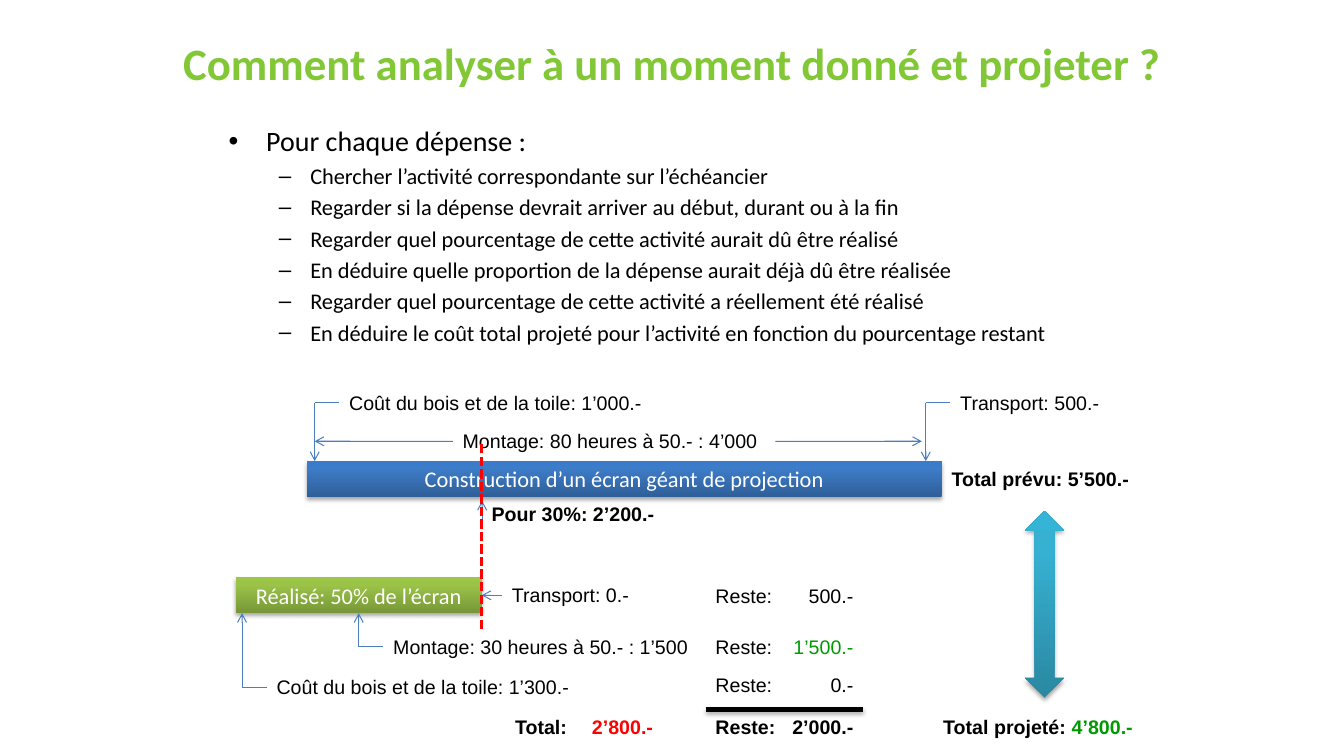
from copy import deepcopy

from lxml import etree
from pptx import Presentation
from pptx import util as u
from pptx.dml.color import RGBColor
from pptx.enum import dml, shapes, text
from pptx.oxml.ns import qn

# Colours; gradients run from bottom to top
BLUE, BLACK, WHITE = "4B7EBC", "000000", "FFFFFF"
GREEN, RED, LIME = "009900", "FF0000", "82C836"
GREEN_BAR = ("779737", "9BC348", "9DC746")
BLUE_BAR = ("2F5F99", "3D7CC7", "3A7CCB")
TEAL_ARROW = ("2A88A2", "37B1D2", "34B4D6")
STOPS = (0, 0.8, 1)

# Shared lengths in centimetres
LABEL_H = 0.86
REACH = 0.62
AMOUNT_W, AMOUNT_TAB = 4.17, 3.48

# Connection sites of a rectangle
LEFT, BOTTOM, RIGHT = 1, 2, 3

# Bullet formats by level: margin, hanging indent, mark, text size, space before
LEVELS = [(0.95, 0.95, "•", 20, 0), (2.06, 0.79, "–", 16, 3.2)]
METHOD = [
    (0, "Pour chaque dépense :"),
    (1, "Chercher l’activité correspondante sur l’échéancier"),
    (1, "Regarder si la dépense devrait arriver au début, durant ou à la fin"),
    (1, "Regarder quel pourcentage de cette activité aurait dû être réalisé"),
    (1, "En déduire quelle proportion de la dépense aurait déjà dû être réalisée"),
    (1, "Regarder quel pourcentage de cette activité a réellement été réalisé"),
    (1, "En déduire le coût total projeté pour l’activité en fonction du pourcentage restant"),
]


def rgb(value):
    return RGBColor.from_string(value)


def cm(*values):
    return [u.Cm(v) for v in values]


def set_all(target, **values):
    for key, value in values.items():
        setattr(target, key, value)


def sub(parent, tag, **attrs):
    return etree.SubElement(parent, qn(tag), attrs)


def add_run(p, content, color, size, name, bold=False):
    r = p.add_run()
    r.text = content
    set_all(r.font, size=u.Pt(size), name=name, bold=bold)
    r.font.color.rgb = rgb(color)


def drop_shadow(effects):
    shadow = sub(effects, "a:outerShdw", blurRad="39370", dist="22860",
                 dir="5400000", rotWithShape="0")
    sub(sub(shadow, "a:srgbClr", val=BLACK), "a:alpha", val="35000")


def add_label(s, x, mid, w, *runs, bold=False, tab=None):
    """One line of (text, colour) runs centred on height mid."""
    sp = s.shapes.add_textbox(*cm(x, mid - LABEL_H / 2, w, LABEL_H))
    sp.text_frame.word_wrap = tab is not None
    p = sp.text_frame.paragraphs[0]
    if tab:
        tabs = sub(p._p.get_or_add_pPr(), "a:tabLst")
        sub(tabs, "a:tab", pos=str(u.Cm(tab)), algn="r")
    for content, color in runs:
        add_run(p, content, color, 14, "Arial", bold)
    return sp


def add_line(s, x1, y1, x2, y2, color=BLUE, width=0.75, arrow=False,
             dash=None, shadow=False, begin=None, end=None):
    """Straight line; begin and end are (shape, site) joints."""
    c = s.shapes.add_connector(shapes.MSO_CONNECTOR.STRAIGHT, *cm(x1, y1, x2, y2))
    if begin:
        c.begin_connect(*begin)
    if end:
        c.end_connect(*end)
    c.line.color.rgb = rgb(color)
    set_all(c.line, width=u.Pt(width), dash_style=dash)
    if arrow:
        sub(c.line._get_or_add_ln(), "a:tailEnd", type="arrow")
    effects = sub(c._element.spPr, "a:effectLst")
    if shadow:
        drop_shadow(effects)


def add_elbow(s, x, mid, bar_y, w, content, end=None):
    """Label, short line and arrow that lead to the edge of a bar."""
    label = add_label(s, x + REACH, mid, w, (content, BLACK))
    add_line(s, x, mid, x + REACH, mid, end=(label, LEFT))
    add_line(s, x, mid, x, bar_y, arrow=True, end=end)


def add_gradient_shape(s, kind, box, colors):
    sp = s.shapes.add_shape(kind, *cm(*box))
    sp.fill.gradient()
    sp.fill.gradient_angle = 90
    stop_list = sp._element.spPr.find(".//" + qn("a:gsLst"))
    stop_list.append(deepcopy(stop_list[-1]))
    for stop, position, color in zip(sp.fill.gradient_stops, STOPS, colors):
        stop.position = position
        stop.color.rgb = rgb(color)
    sp.line.fill.background()
    sp.shadow.inherit = False
    drop_shadow(sp._element.spPr.find(qn("a:effectLst")))
    return sp


def add_bar(s, box, colors, content):
    sp = add_gradient_shape(s, shapes.MSO_SHAPE.RECTANGLE, box, colors)
    sp.text_frame.vertical_anchor = text.MSO_ANCHOR.MIDDLE
    p = sp.text_frame.paragraphs[0]
    p.alignment = text.PP_ALIGN.CENTER
    add_run(p, content, WHITE, 16, "Calibri")
    return sp


def draw_title(s, box):
    sp = s.shapes.title
    left, top, width, height = cm(*box)
    set_all(sp, left=left, top=top, width=width, height=height)
    set_all(sp.text_frame, auto_size=text.MSO_AUTO_SIZE.NONE,
            vertical_anchor=text.MSO_ANCHOR.MIDDLE)
    p = sp.text_frame.paragraphs[0]
    p.alignment = text.PP_ALIGN.CENTER
    add_run(p, "Comment analyser à un moment donné et projeter ?", LIME, 32, "Calibri", True)


def draw_method(s, box):
    tf = s.shapes.add_textbox(*cm(*box)).text_frame
    tf.word_wrap = True
    for i, (level, content) in enumerate(METHOD):
        p = tf.add_paragraph() if i else tf.paragraphs[0]
        margin, hang, mark, size, before = LEVELS[level]
        pPr = p._p.get_or_add_pPr()
        pPr.set("marL", str(u.Cm(margin)))
        pPr.set("indent", str(-u.Cm(hang)))
        sub(pPr, "a:buFont", typeface="Arial")
        sub(pPr, "a:buChar", char=mark)
        set_all(p, level=level, space_before=u.Pt(before))
        add_run(p, content, BLACK, size, "Calibri")


def draw_actual(s, box):
    x, y, w, h = box
    mid, right, bottom = y + h / 2, x + w, y + h
    bar = add_bar(s, box, GREEN_BAR, "Réalisé: 50% de l’écran")
    # Costs so far
    label = add_label(s, right + 0.51, mid, 3.48, ("Transport: 0.-", BLACK))
    add_line(s, right + 0.51, mid, right, mid, arrow=True,
             begin=(label, LEFT), end=(bar, RIGHT))
    add_elbow(s, x + w / 2, bottom + 0.85, bottom, 8.13,
              "Montage: 30 heures à 50.- : 1’500", end=(bar, BOTTOM))
    add_elbow(s, x + 0.16, bottom + 1.87, bottom, 7.92, "Coût du bois et de la toile: 1’300.-")
    add_label(s, x + 6.79, bottom + 2.86, AMOUNT_W, ("Total: \t", BLACK), ("2’800.-", RED),
              bold=True, tab=AMOUNT_TAB)


def draw_planned(s, box):
    x, y, w, h = box
    right, bottom = x + w, y + h
    add_bar(s, box, BLUE_BAR, "Construction d’un écran géant de projection")
    # Costs at the start and at the end
    add_elbow(s, x + 0.2, y - 1.47, y, 7.92, "Coût du bois et de la toile: 1’000.-")
    add_elbow(s, right - 0.4, y - 1.47, y, 4.01, "Transport: 500.-")
    # Assembly spans the whole bar
    mid, label_x, label_w = y - 0.5, x + 3.68, 8.13
    label = add_label(s, label_x, mid, label_w, ("Montage: 80 heures à 50.- : 4’000", BLACK))
    add_line(s, label_x, mid, x + 0.2, mid, arrow=True, begin=(label, LEFT))
    add_line(s, label_x + label_w, mid, right - 0.5, mid, arrow=True, begin=(label, RIGHT))
    add_label(s, right, y + h / 2, 5, ("Total prévu: 5’500.-", BLACK), bold=True)
    # Pointer to the present date
    add_line(s, x + 4.42, bottom + 0.6, x + 4.42, bottom + 0.1, arrow=True)


def draw_remaining(s, box):
    x, y, w, h = box
    total_y = y + h - LABEL_H
    rows = [(y, "500.-", BLACK), (y + 1.27, "1’500.-", GREEN),
            (y + 2.24, "0.-", BLACK), (total_y, "2’000.-", BLACK)]
    for top, amount, color in rows:
        add_label(s, x, top + LABEL_H / 2, w, ("Reste: \t", BLACK), (amount, color),
                  bold=top == total_y, tab=AMOUNT_TAB)
    add_line(s, x, total_y, x + 3.96, total_y, BLACK, 3, shadow=True)


def draw_projection(s, box):
    x, y, w, h = box
    add_label(s, x, y + h - LABEL_H / 2, w, ("Total projeté: ", BLACK), ("\t4’800.-", GREEN),
              bold=True, tab=4.72)
    add_gradient_shape(s, shapes.MSO_SHAPE.UP_DOWN_ARROW, (x + 2.31, y, 0.99, 4.7), TEAL_ARROW)


def draw_today(s, box):
    x, y, w, h = box
    add_line(s, x, y + h, x, y, RED, 2.25, dash=dml.MSO_LINE.SQUARE_DOT)
    add_label(s, x, y + 1.82, w, ("Pour 30%: 2’200.-", BLACK), bold=True)


def main():
    prs = Presentation()
    prs.slide_width, prs.slide_height = cm(33.87, 19.05)
    s = prs.slides.add_slide(prs.slide_layouts[5])
    regions = [
        (draw_title, (1.7, 0.76, 30.48, 1.63)),
        (draw_method, (5.51, 3, 22.86, 6.35)),
        (draw_actual, (5.94, 14.55, 6.2, 0.9)),
        (draw_planned, (7.73, 11.62, 16, 0.9)),
        (draw_remaining, (17.78, 14.6, AMOUNT_W, 4.14)),
        (draw_projection, (23.52, 12.88, 5.61, 5.86)),
        (draw_today, (12.14, 11.13, 4.62, 4.72)),
    ]
    for draw, box in regions:
        draw(s, box)
    prs.save("out.pptx")


if __name__ == "__main__":
    main()
